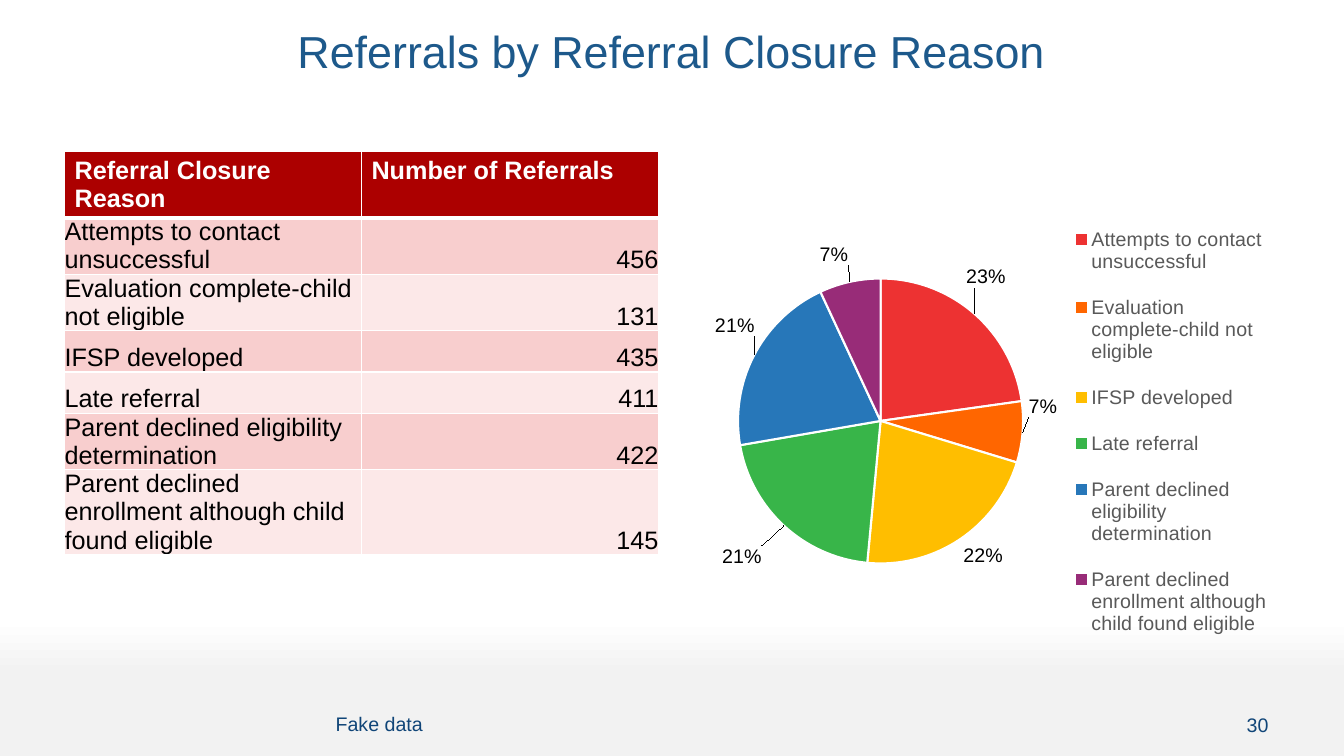
import copy
import pptx
import pptx.chart.data
import pptx.dml.color
import pptx.enum.chart
import pptx.enum.text
import pptx.oxml
import pptx.oxml.ns
import pptx.util

Inches = pptx.util.Inches
ALIGN = pptx.enum.text.PP_ALIGN
ANCHOR = pptx.enum.text.MSO_ANCHOR
NAVY, BLACK, WHITE = "104578", "000000", "FFFFFF"
HEADS = ("Referral Closure Reason", "Number of Referrals")
REASONS = (
    ("Attempts to contact unsuccessful", 456, 23, "ED3232", (-0.02, -0.04)),
    ("Evaluation complete-child not eligible", 131, 7, "FF6600", (0, -0.05)),
    ("IFSP developed", 435, 22, "FFBE00", None),
    ("Late referral", 411, 21, "38B549", (-0.03, 0.03)),
    ("Parent declined eligibility determination", 422, 21, "2777B9", (0.01, -0.03)),
    ("Parent declined enrollment although child found eligible", 145, 7, "982C78", (0, -0.02)),
)


def color(text):
    """Turn a hex string into a colour."""
    return pptx.dml.color.RGBColor.from_string(text)


def style(font, size, hue, bold=False):
    """Set the look of a font."""
    form = {"name": "Arial", "size": pptx.util.Pt(size), "bold": bold}
    for key, value in form.items():
        setattr(font, key, value)
    font.color.rgb = color(hue)


def write(frame, text, size, hue, align=ALIGN.LEFT, bold=False):
    """Put one paragraph in a text frame."""
    frame.word_wrap = True
    frame.text = text
    line = frame.paragraphs[0]
    line.alignment = align
    style(line.runs[0].font, size, hue, bold)
    return line


def paint(slide):
    """Fade the background to grey at the foot."""
    fill = slide.background.fill
    fill.gradient()
    fill.gradient_angle = 270
    for stop, (place, hue) in zip(fill.gradient_stops, ((0.82, WHITE), (0.89, "F2F2F2"))):
        stop.position = place
        stop.color.rgb = color(hue)


def add_title(slide, text):
    """Place and fill the title."""
    title = slide.shapes.title
    box = {"left": 0.64, "top": 0.25, "width": 12.04, "height": 0.98}
    for key, value in box.items():
        setattr(title, key, Inches(value))
    line = write(title.text_frame, text, 32, "1D598B", ALIGN.CENTER)
    line.line_spacing = 0.9
    title.text_frame.vertical_anchor = ANCHOR.TOP


def add_note(slide, box, text, align):
    """Add a text box at the foot."""
    frame = slide.shapes.add_textbox(*map(Inches, box)).text_frame
    write(frame, text, 14, NAVY, align)
    frame.vertical_anchor = ANCHOR.MIDDLE


def edge(cell, sides):
    """Draw white borders from side names and widths."""
    props = cell._tc.get_or_add_tcPr()
    for side, width in sides.items():
        props.append(pptx.oxml.parse_xml(
            f'<a:ln{side} {pptx.oxml.ns.nsdecls("a")} w="{pptx.util.Pt(width)}">'
            f'<a:solidFill><a:srgbClr val="{WHITE}"/></a:solidFill></a:ln{side}>'))


def add_table(slide):
    """Add the table of reasons and counts."""
    rows = [HEADS] + [reason[:2] for reason in REASONS]
    box = map(Inches, (0.64, 1.5, 5.89, 0.41 * len(rows)))
    table = slide.shapes.add_table(len(rows), len(HEADS), *box).table
    table.horz_banding = False
    for r, row in enumerate(rows):
        table.rows[r].height = Inches(0.41)
        for c, value in enumerate(row):
            cell = table.cell(r, c)
            head = r == 0
            align = ALIGN.RIGHT if c and not head else ALIGN.LEFT
            write(cell.text_frame, str(value), 18, WHITE if head else BLACK, align, head)
            edge(cell, {"L": 1, "R": 1, "T": 3 if r == 1 else 1, "B": 3 if head else 1})
            cell.fill.solid()
            cell.fill.fore_color.rgb = color("AC0000" if head else ("FCE8E8", "F8CECE")[r % 2])
            if not head:
                cell.vertical_anchor = ANCHOR.BOTTOM
                for side in ("left", "right", "top", "bottom"):
                    setattr(cell, f"margin_{side}", 0)


def layout(spots, inner=False):
    """Build a manual layout from fractions of the chart."""
    parts = '<c:layoutTarget val="inner"/>' if inner else ""
    if len(spots) == 4:
        parts += '<c:xMode val="edge"/><c:yMode val="edge"/>'
    parts += "".join(f'<c:{key} val="{value}"/>' for key, value in zip("xywh", spots))
    return pptx.oxml.parse_xml(
        f'<c:layout {pptx.oxml.ns.nsdecls("c")}><c:manualLayout>{parts}</c:manualLayout></c:layout>')


def shift(labels, index, spots):
    """Move one slice label off its usual place."""
    node = labels._element
    label = pptx.oxml.parse_xml(
        f'<c:dLbl {pptx.oxml.ns.nsdecls("c")}><c:idx val="{index}"/><c:dLblPos val="outEnd"/>'
        '<c:showLegendKey val="0"/><c:showVal val="0"/><c:showCatName val="0"/>'
        '<c:showSerName val="0"/><c:showPercent val="1"/><c:showBubbleSize val="0"/></c:dLbl>')
    label.insert(1, layout(spots))
    label.insert(2, copy.deepcopy(node.find(pptx.oxml.ns.qn("c:txPr"))))
    node.insert(0, label)


def add_pie(slide):
    """Add the pie chart of shares."""
    data = pptx.chart.data.CategoryChartData()
    data.categories = [reason[0] for reason in REASONS]
    data.add_series("Series 1", [reason[2] for reason in REASONS])
    kinds = pptx.enum.chart
    box = map(Inches, (6.79, 1.51, 5.89, 5.18))
    chart = slide.shapes.add_chart(kinds.XL_CHART_TYPE.PIE, *box, data).chart
    style(chart.font, 10, BLACK)
    chart.has_title = False
    chart.has_legend = True
    legend = chart.legend
    legend.position = kinds.XL_LEGEND_POSITION.RIGHT
    legend.include_in_layout = False
    style(legend.font, 14, "595959")
    plot = chart.plots[0]
    plot.vary_by_categories = True
    series = plot.series[0]
    labels = series.data_labels
    style(labels.font, 14, BLACK)
    form = {"show_percentage": True, "show_value": False,
            "position": kinds.XL_LABEL_POSITION.OUTSIDE_END}
    for key, value in form.items():
        setattr(labels, key, value)
    for index, reason in reversed(list(enumerate(REASONS))):
        slice_ = series.points[index].format
        slice_.fill.solid()
        slice_.fill.fore_color.rgb = color(reason[3])
        slice_.line.color.rgb = color(WHITE)
        slice_.line.width = pptx.util.Pt(1.5)
        if reason[4]:
            shift(labels, index, reason[4])
    area = chart._chartSpace.chart.plotArea
    for old in area.findall(pptx.oxml.ns.qn("c:layout")):
        area.remove(old)
    area.insert(0, layout((0.09, 0.24, 0.48, 0.55), True))
    key = legend._element
    for old in key.findall(pptx.oxml.ns.qn("c:layout")):
        key.remove(old)
    key.insert(1, layout((0.66, 0.1, 0.33, 0.87)))


def main():
    """Build and save the slide."""
    deck = pptx.Presentation()
    deck.slide_width, deck.slide_height = Inches(13.33), Inches(7.5)
    slide = deck.slides.add_slide(deck.slide_layouts[5])
    paint(slide)
    add_title(slide, "Referrals by Referral Closure Reason")
    add_table(slide)
    add_pie(slide)
    add_note(slide, (3.23, 6.91, 8.1, 0.54), "Fake data", ALIGN.LEFT)
    add_note(slide, (11.33, 6.91, 1.35, 0.55), "30", ALIGN.RIGHT)
    deck.save("out.pptx")


if __name__ == "__main__":
    main()
